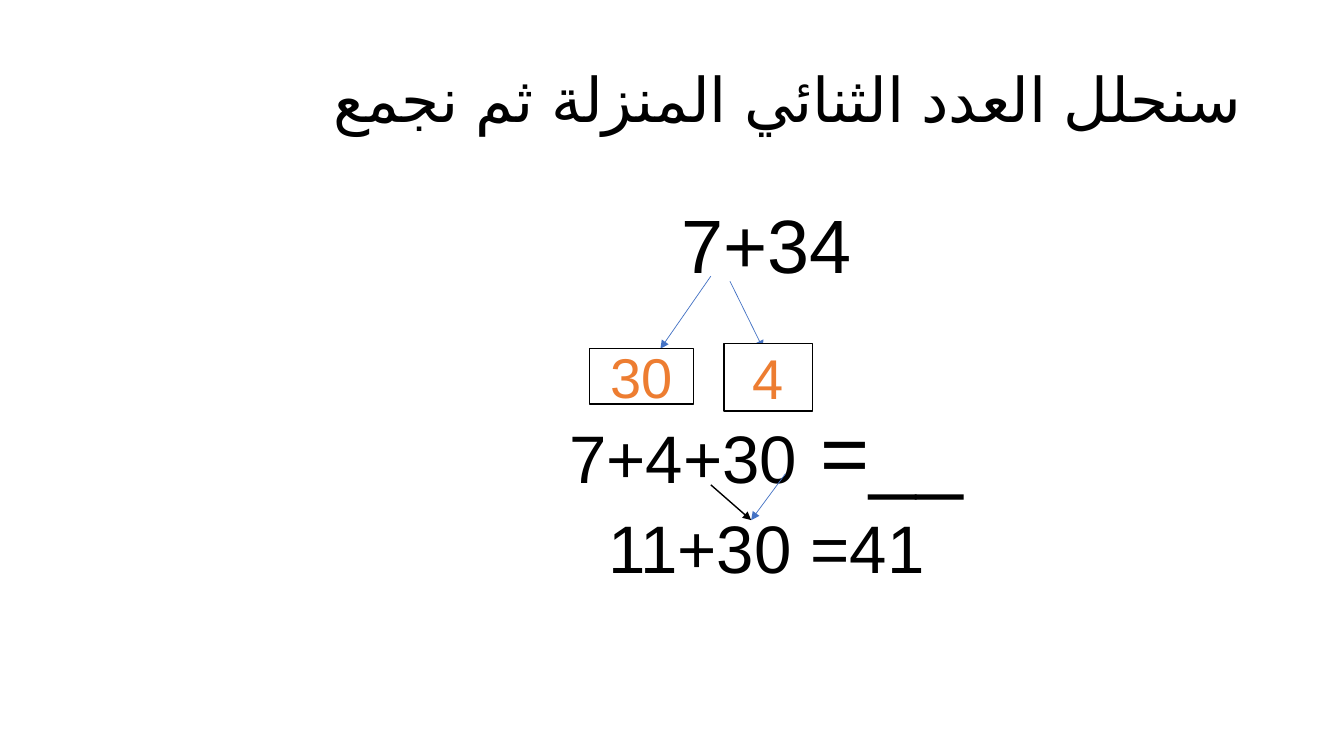
from dataclasses import dataclass

from lxml.etree import SubElement
from pptx import Presentation
from pptx.dml.color import RGBColor
from pptx.enum.lang import MSO_LANGUAGE_ID
from pptx.enum.shapes import MSO_CONNECTOR, MSO_SHAPE
from pptx.enum.text import MSO_ANCHOR, PP_ALIGN
from pptx.oxml.ns import qn
from pptx.slide import Slide
from pptx.text.text import TextFrame
from pptx.util import Inches, Pt


@dataclass(frozen=True)
class Theme:
    font: str = "Calibri"
    arabic_font: str = "Arial"
    black: RGBColor = RGBColor(0, 0, 0)
    white: RGBColor = RGBColor(255, 255, 255)
    blue: RGBColor = RGBColor(0x44, 0x72, 0xC4)
    orange: RGBColor = RGBColor(0xED, 0x7D, 0x31)
    title: int = 44
    sum: int = 54
    blank: int = 60
    step: int = 48
    addend: int = 40


THEME = Theme()


@dataclass(frozen=True)
class Line:
    runs: tuple[tuple[str, int], ...]
    color: RGBColor = THEME.black
    align: PP_ALIGN = PP_ALIGN.CENTER
    spacing: float = 0.9
    before: int = 0


@dataclass(frozen=True)
class TextBox:
    at: tuple[float, float, float, float]
    anchor: MSO_ANCHOR
    lines: tuple[Line, ...]


@dataclass(frozen=True)
class AddendBox:
    at: tuple[float, float, float, float]
    text: str


@dataclass(frozen=True)
class Arrow:
    start: tuple[float, float]
    end: tuple[float, float]
    color: RGBColor = THEME.blue
    width: float = 0.5


TEXTS = (
    TextBox((0.92, 0.4, 11.5, 1.23), MSO_ANCHOR.MIDDLE, (
        Line((("سنحلل العدد الثنائي المنزلة ثم نجمع", THEME.title),), align=PP_ALIGN.RIGHT),
    )),
    TextBox((2.78, 2.02, 9.64, 4.74), MSO_ANCHOR.TOP, (
        Line((("7+34", THEME.sum),), before=10),
        Line((("__= ", THEME.blank), ("7+4+30", THEME.step)), before=86),
        Line((("41= 11+30", THEME.step),), before=10),
    )),
)
SPLIT_ARROWS = (
    Arrow((7.05, 2.74), (6.55, 3.46)),
    Arrow((7.24, 2.79), (7.57, 3.46)),
)
ADDENDS = (
    AddendBox((7.18, 3.41, 0.88, 0.67), "4"),
    AddendBox((5.85, 3.46, 1.03, 0.55), "30"),
)
JOIN_ARROWS = (
    Arrow((7.05, 4.81), (7.45, 5.16), THEME.black, 1),
    Arrow((7.79, 4.7), (7.45, 5.16)),
)


def write_lines(tf: TextFrame, lines: tuple[Line, ...], anchor: MSO_ANCHOR) -> None:
    tf.word_wrap = True
    tf.vertical_anchor = anchor
    for i, line in enumerate(lines):
        p = tf.add_paragraph() if i else tf.paragraphs[0]
        p.alignment = line.align
        p.line_spacing = line.spacing
        p.space_before = Pt(line.before)
        p._p.get_or_add_pPr().set("rtl", "1")
        for text, size in line.runs:
            r = p.add_run()
            r.text = text
            r.font.size = Pt(size)
            r.font.name = THEME.font
            r.font.color.rgb = line.color
            r.font.language_id = MSO_LANGUAGE_ID.ARABIC
            SubElement(r.font._element, qn("a:cs")).set("typeface", THEME.arabic_font)


def add_text(s: Slide, box: TextBox) -> None:
    sp = s.shapes.add_textbox(*map(Inches, box.at))
    write_lines(sp.text_frame, box.lines, box.anchor)


def add_addend(s: Slide, addend: AddendBox) -> None:
    sp = s.shapes.add_shape(MSO_SHAPE.RECTANGLE, *map(Inches, addend.at))
    sp.shadow.inherit = False
    sp.fill.solid()
    sp.fill.fore_color.rgb = THEME.white
    sp.line.color.rgb = THEME.black
    sp.line.width = Pt(1)
    line = Line(((addend.text, THEME.addend),), THEME.orange, spacing=1.0)
    write_lines(sp.text_frame, (line,), MSO_ANCHOR.MIDDLE)


def add_arrow(s: Slide, arrow: Arrow) -> None:
    ends = map(Inches, arrow.start + arrow.end)
    c = s.shapes.add_connector(MSO_CONNECTOR.STRAIGHT, *ends)
    c.line.color.rgb = arrow.color
    c.line.width = Pt(arrow.width)
    SubElement(c.line._get_or_add_ln(), qn("a:tailEnd")).set("type", "triangle")
    SubElement(c._element.spPr, qn("a:effectLst"))


def main() -> None:
    prs = Presentation()
    prs.slide_width = Inches(13.33)
    prs.slide_height = Inches(7.5)
    s = prs.slides.add_slide(prs.slide_layouts[6])
    for box in TEXTS:
        add_text(s, box)
    for arrow in SPLIT_ARROWS:
        add_arrow(s, arrow)
    for addend in ADDENDS:
        add_addend(s, addend)
    for arrow in JOIN_ARROWS:
        add_arrow(s, arrow)
    prs.save("out.pptx")


if __name__ == "__main__":
    main()
